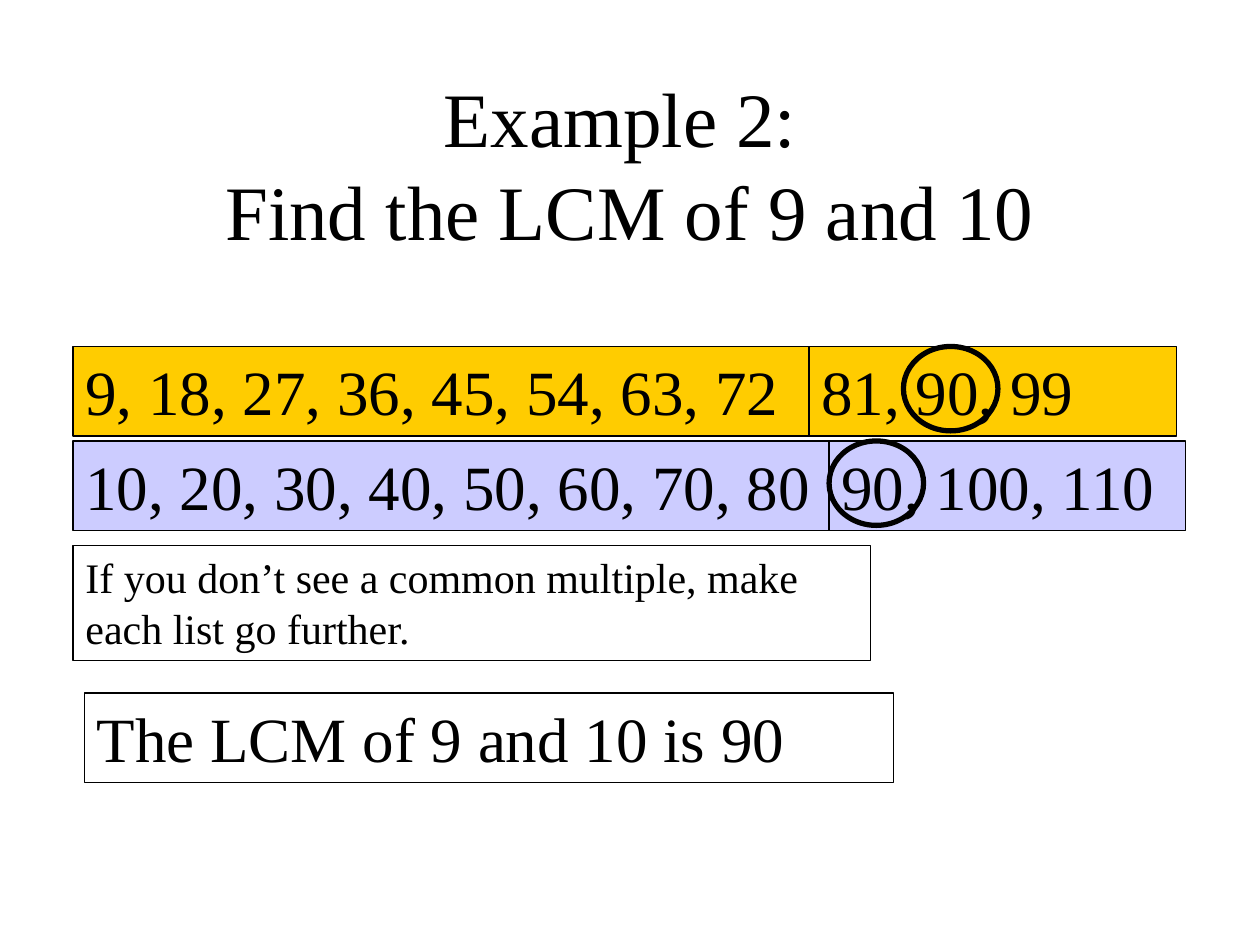
from pptx import Presentation
from pptx.dml.color import RGBColor
from pptx.enum import shapes, text
from pptx import util as u

BLACK = RGBColor(0x00, 0x00, 0x00)
WHITE = RGBColor(0xFF, 0xFF, 0xFF)
GOLD = RGBColor(0xFF, 0xCC, 0x00)
LAVENDER = RGBColor(0xCC, 0xCC, 0xFF)


class Deck:
    font = "Times New Roman"

    def __init__(self, prs):
        self.s = prs.slides.add_slide(prs.slide_layouts[6])

    def set_text(self, sp, words, size, align):
        tf = sp.text_frame
        tf.word_wrap = True
        p = tf.paragraphs[0]
        p.text = words
        p.alignment = align
        p.font.name = self.font
        p.font.size = u.Pt(size)
        p.font.color.rgb = BLACK
        return tf

    def shape(self, kind, box, line):
        sp = self.s.shapes.add_shape(kind, *map(u.Inches, box))
        sp.shadow.inherit = False
        sp.line.color.rgb = BLACK
        sp.line.width = u.Pt(line)
        return sp

    def title(self, words, box):
        sp = self.s.shapes.add_textbox(*map(u.Inches, box))
        tf = self.set_text(sp, words, 44, text.PP_ALIGN.CENTER)
        tf.vertical_anchor = text.MSO_ANCHOR.MIDDLE

    def panel(self, words, box, fill=WHITE, size=36):
        sp = self.shape(shapes.MSO_SHAPE.RECTANGLE, box, 0.75)
        sp.fill.solid()
        sp.fill.fore_color.rgb = fill
        tf = self.set_text(sp, words, size, text.PP_ALIGN.LEFT)
        tf.vertical_anchor = text.MSO_ANCHOR.TOP
        tf.auto_size = text.MSO_AUTO_SIZE.SHAPE_TO_FIT_TEXT

    def ring(self, left, top):
        sp = self.shape(shapes.MSO_SHAPE.OVAL, (left, top, 0.75, 0.67), 3)
        sp.fill.background()


def main():
    prs = Presentation()
    prs.slide_width = u.Inches(10)
    prs.slide_height = u.Inches(7.5)
    deck = Deck(prs)

    deck.title("Example 2: \nFind the LCM of 9 and 10", (0.75, 0.67, 8.5, 1.25))

    nines_top, tens_top, row_height = 2.75, 3.5, 0.71
    deck.panel("9, 18, 27, 36, 45, 54, 63, 72", (0.58, nines_top, 6.25, row_height), GOLD)
    deck.panel("10, 20, 30, 40, 50, 60, 70, 80", (0.58, tens_top, 6.25, row_height), LAVENDER)
    deck.panel("If you don’t see a common multiple, make each list go further.",
               (0.58, 4.33, 6.33, 0.91), size=24)
    deck.panel("81, 90, 99", (6.42, nines_top, 2.92, row_height), GOLD)
    deck.panel("90, 100, 110", (6.58, tens_top, 2.83, row_height), LAVENDER)
    deck.ring(7.17, nines_top)
    deck.ring(6.58, tens_top)
    deck.panel("The LCM of 9 and 10 is 90", (0.67, 5.5, 6.42, row_height))

    prs.save("out.pptx")


if __name__ == "__main__":
    main()
